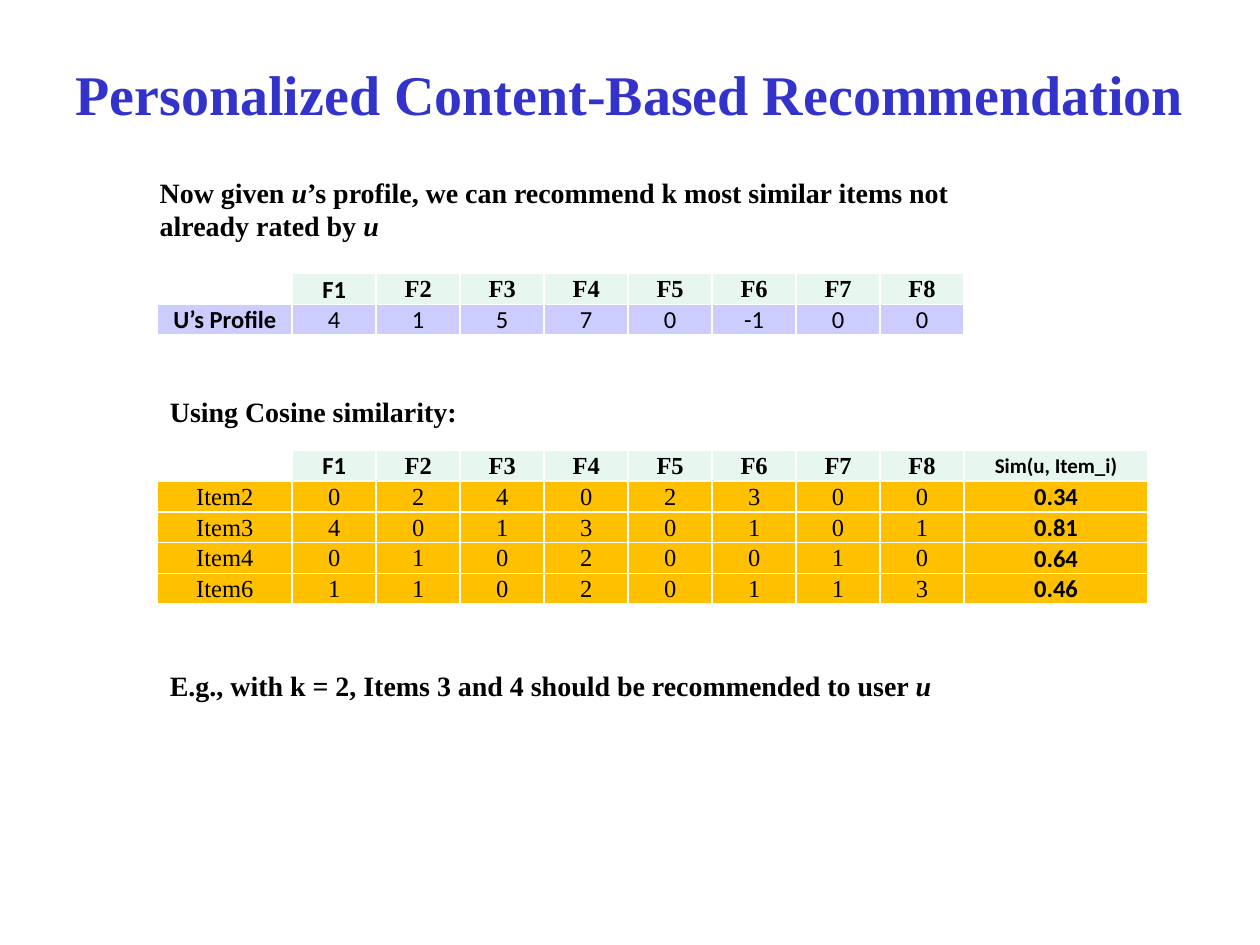
from dataclasses import dataclass
from lxml.etree import SubElement
from pptx import Presentation
from pptx.dml.color import RGBColor
from pptx.enum.text import MSO_ANCHOR, PP_ALIGN
from pptx.oxml.ns import qn
from pptx.util import Pt

SERIF, SANS = "Times New Roman", "Calibri"
MINT, LILAC, GOLD = "E7F6EF", "CCCCFF", "FFC000"
BLACK, WHITE, BLUE = "000000", "FFFFFF", "3333CC"
LEAD, STEP, LAST, ROW = 77, 48, 105.1, 17.6
HEADS = [f"F{n}" for n in range(1, 9)]


@dataclass
class Run:
    text: str
    size: float = 16
    face: str = SERIF
    color: str = BLACK
    bold: bool = True
    slant: bool = False


@dataclass
class Box:
    left: float
    top: float
    width: float
    height: float
    runs: list[Run]
    title: bool = False


@dataclass
class Cell:
    run: Run | None
    fill: str


@dataclass
class Grid:
    left: float
    top: float
    widths: list[float]
    rows: list[list[Cell]]


def paint(value: str) -> RGBColor:
    return RGBColor.from_string(value)


def write(para, runs: list[Run]) -> None:
    for item in runs:
        run = para.add_run()
        run.text = item.text
        font = run.font
        font.size, font.name = Pt(item.size), item.face
        font.bold, font.italic = item.bold, item.slant
        font.color.rgb = paint(item.color)


def draw_box(slide, box: Box) -> None:
    shape = slide.shapes.add_textbox(
        Pt(box.left), Pt(box.top), Pt(box.width), Pt(box.height))
    frame = shape.text_frame
    frame.word_wrap = True
    para = frame.paragraphs[0]
    if box.title:
        frame.vertical_anchor = MSO_ANCHOR.MIDDLE
        para.alignment = PP_ALIGN.CENTER
    write(para, box.runs)


def edge(cell) -> None:
    props = cell._tc.get_or_add_tcPr()
    for at, side in enumerate(("lnL", "lnR", "lnT", "lnB")):
        line = props.makeelement(qn(f"a:{side}"), {"w": str(Pt(1))})
        fill = SubElement(line, qn("a:solidFill"))
        SubElement(fill, qn("a:srgbClr"), val=WHITE)
        props.insert(at, line)


def draw_cell(cell, data: Cell) -> None:
    cell.fill.solid()
    cell.fill.fore_color.rgb = paint(data.fill)
    cell.margin_left = cell.margin_right = cell.margin_top = Pt(0.7)
    cell.margin_bottom = Pt(0)
    cell.vertical_anchor = MSO_ANCHOR.MIDDLE
    edge(cell)
    para = cell.text_frame.paragraphs[0]
    para.alignment = PP_ALIGN.CENTER
    if data.run:
        write(para, [data.run])
    else:
        SubElement(para._p, qn("a:endParaRPr"), sz="1400")


def draw_grid(slide, grid: Grid) -> None:
    count = len(grid.rows)
    frame = slide.shapes.add_table(
        count, len(grid.widths), Pt(grid.left), Pt(grid.top),
        Pt(sum(grid.widths)), Pt(ROW * count))
    table = frame.table
    table.first_row = table.horz_banding = False
    for col, width in zip(table.columns, grid.widths):
        col.width = Pt(width)
    for row, cells in zip(table.rows, grid.rows):
        row.height = Pt(ROW)
        for cell, data in zip(row.cells, cells):
            draw_cell(cell, data)


def head() -> list[Cell]:
    faces = [SANS] + [SERIF] * 7
    return [Cell(None, WHITE)] + [
        Cell(Run(text, 14, face), MINT) for text, face in zip(HEADS, faces)]


def line(name: str, marks: list[int], face: str, fill: str,
         bold: bool) -> list[Cell]:
    return [Cell(Run(name, 14, face, bold=bold), fill)] + [
        Cell(Run(str(mark), 14, face, bold=False), fill) for mark in marks]


def item(name: str, marks: list[int], score: str) -> list[Cell]:
    return line(name, marks, SERIF, GOLD, False) + [
        Cell(Run(score, 14, SANS), GOLD)]


BOXES = [
    Box(31.7, 23, 656.6, 60,
        [Run("Personalized Content-Based Recommendation", 32, color=BLUE)],
        True),
    Box(84.2, 96.5, 497.5, 46, [
        Run("Now given "), Run("u", slant=True),
        Run("’s profile, we can recommend k most similar items not "
            "already rated by "),
        Run("u", slant=True)]),
    Box(90, 221.8, 497.5, 26.6, [Run("Using Cosine similarity:")]),
    Box(90, 378.7, 497.5, 26.6, [
        Run("E.g., with k = 2, Items 3 and 4 should be recommended to user "),
        Run("u", slant=True)]),
]

SPANS = [LEAD] + [STEP] * len(HEADS)
GRIDS = [
    Grid(90, 156.4, SPANS, [
        head(),
        line("U’s Profile", [4, 1, 5, 7, 0, -1, 0, 0], SANS, LILAC, True)]),
    Grid(90, 257.3, SPANS + [LAST], [
        head() + [Cell(Run("Sim(u, Item_i)", 12, SANS), MINT)],
        item("Item2", [0, 2, 4, 0, 2, 3, 0, 0], "0.34"),
        item("Item3", [4, 0, 1, 3, 0, 1, 0, 1], "0.81"),
        item("Item4", [0, 1, 0, 2, 0, 0, 1, 0], "0.64"),
        item("Item6", [1, 1, 0, 2, 0, 1, 1, 3], "0.46")]),
]


def main() -> None:
    deck = Presentation()
    deck.slide_width, deck.slide_height = Pt(720), Pt(540)
    slide = deck.slides.add_slide(deck.slide_layouts[6])
    for box in BOXES:
        draw_box(slide, box)
    for grid in GRIDS:
        draw_grid(slide, grid)
    deck.save("out.pptx")


if __name__ == "__main__":
    main()
